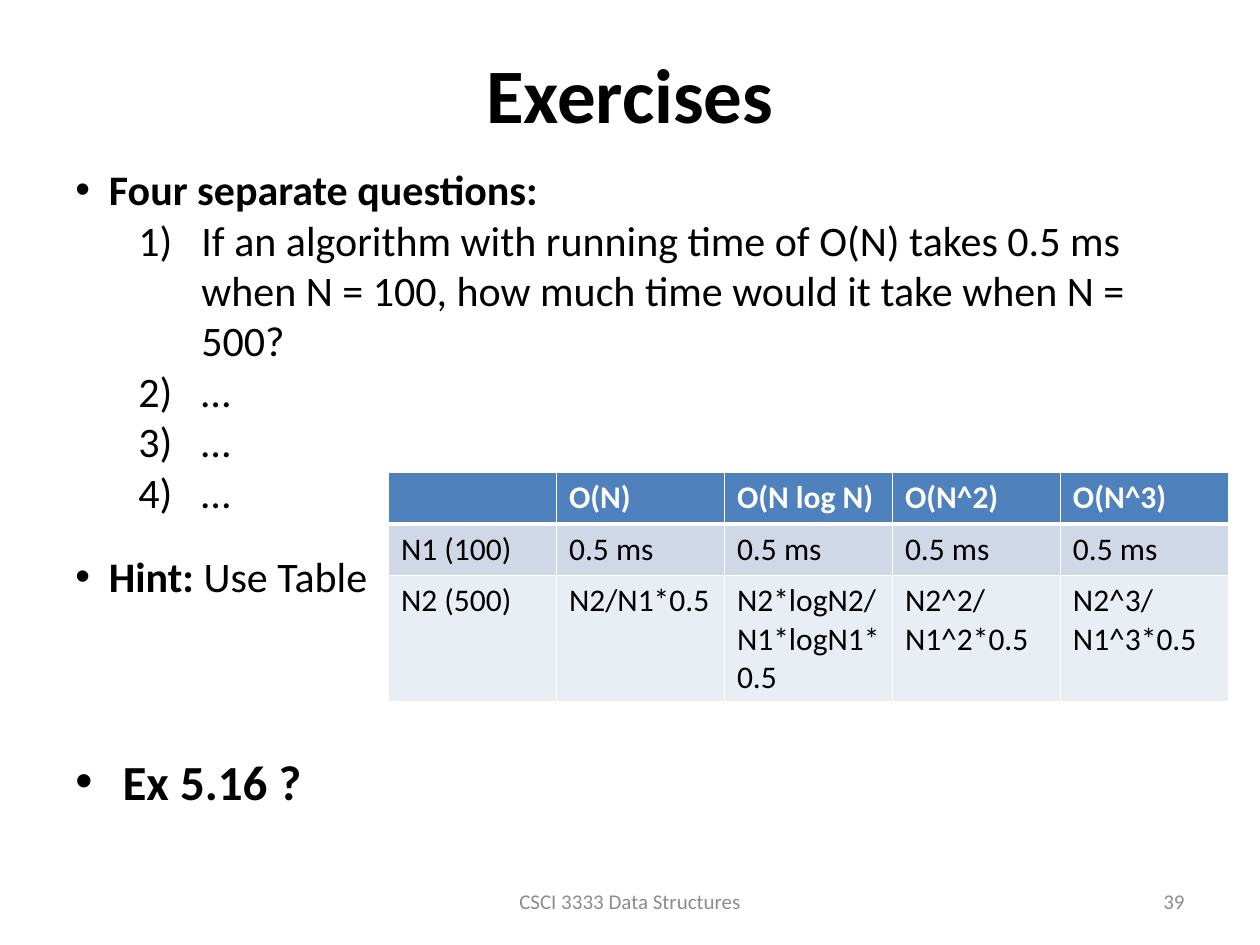
from lxml.etree import SubElement as Sub
from pptx import Presentation as Deck
from pptx.dml.color import RGBColor as Rgb
from pptx.enum.text import MSO_ANCHOR as Anchor, PP_ALIGN as Align
from pptx.oxml.ns import qn
from pptx.util import Inches, Pt

COLS, ROWS = 120, 90
WIDE, HIGH = Inches(10), Inches(7.5)
HUES = {"ink": "000000", "gray": "8C8C8C", "white": "FFFFFF",
        "head": "4F81BD", "odd": "D0D8E8", "even": "E9EDF4"}
ASKS = ["If an algorithm with running time of O(N) takes 0.5 ms "
        "when N = 100, how much time would it take when N = 500?",
        "…", "…", "…"]
GRID = [["", "O(N)", "O(N log N)", "O(N^2)", "O(N^3)"],
        ["N1 (100)"] + ["0.5 ms"] * 4,
        ["N2 (500)", "N2/N1*0.5", "N2*logN2/N1*logN1*0.5",
         "N2^2/N1^2*0.5", "N2^3/N1^3*0.5"]]


def across(n):
    return round(WIDE * n / COLS)


def down(n):
    return round(HIGH * n / ROWS)


def place(box):
    x, y, w, h = box
    return across(x), down(y), across(w), down(h)


def style(run, size, hue="ink", bold=False):
    font = run.font
    font.name, font.size, font.bold = "Calibri", Pt(size), bold
    font.color.rgb = Rgb.from_string(HUES[hue])


def mark(para, left, hang, tag, **kind):
    props = para._p.get_or_add_pPr()
    props.set("marL", str(across(left)))
    props.set("indent", str(-across(hang)))
    face = Sub(props, qn("a:buFont"))
    face.set("typeface", "Arial" if tag == "buChar" else "+mj-lt")
    item = Sub(props, qn("a:" + tag))
    for key, val in kind.items():
        item.set(key, val)


def frame(slide, box, anchor=Anchor.TOP):
    body = slide.shapes.add_textbox(*place(box)).text_frame
    body.word_wrap = True
    body.vertical_anchor = anchor
    return body


def label(slide, box, text, size, align, hue="ink", bold=False):
    body = frame(slide, box, Anchor.MIDDLE)
    body.text = text
    para = body.paragraphs[0]
    para.alignment = align
    style(para.runs[0], size, hue, bold)


def tasks(slide, box):
    body = frame(slide, box)
    body.text = "\n".join(["Four separate questions:"] + ASKS + ["Hint: "])
    first, *asks, hint = body.paragraphs
    hint.space_before = Pt(19.5)
    hint.add_run().text = "Use Table"
    for para in (first, hint):
        mark(para, 3.2, 3.2, "buChar", char="•")
        style(para.runs[0], 24, bold=True)
    style(hint.runs[1], 24)
    for para in asks:
        para.level = 1
        mark(para, 12, 6, "buAutoNum", type="arabicParenR")
        style(para.runs[0], 24)


def final(slide, box):
    body = frame(slide, box)
    body.text = "Ex 5.16 ?"
    para = body.paragraphs[0]
    mark(para, 4.5, 4.5, "buChar", char="•")
    style(para.runs[0], 28, bold=True)


def edge(cell, sides):
    props = cell._tc.get_or_add_tcPr()
    for side, width in sides.items():
        line = Sub(props, qn("a:ln" + side))
        line.set("w", str(Pt(width)))
        fill = Sub(line, qn("a:solidFill"))
        Sub(fill, qn("a:srgbClr")).set("val", HUES["white"])


def times(slide, box):
    table = slide.shapes.add_table(len(GRID), len(GRID[0]), *place(box)).table
    for col in table.columns:
        col.width = across(box[2] / len(GRID[0]))
    for row, size in zip(table.rows, (4.9, 4.9, 12)):
        row.height = down(size)
    for r, (texts, hue) in enumerate(zip(GRID, ("head", "odd", "even"))):
        top = r == 0
        for c, text in enumerate(texts):
            cell = table.cell(r, c)
            cell.text = text
            for run in cell.text_frame.paragraphs[0].runs:
                style(run, 18, "white" if top else "ink", top)
            edge(cell, {"L": 1, "R": 1, "T": 3 if r == 1 else 1,
                        "B": 3 if top else 1})
            cell.fill.solid()
            cell.fill.fore_color.rgb = Rgb.from_string(HUES[hue])


def main():
    deck = Deck()
    deck.slide_width, deck.slide_height = WIDE, HIGH
    slide = deck.slides.add_slide(deck.slide_layouts[6])
    final(slide, (6, 71, 108, 7))
    label(slide, (41, 83.4, 38, 4.8), "CSCI 3333 Data Structures",
          12, Align.CENTER, "gray")
    label(slide, (86, 83.4, 28, 4.8), "39", 12, Align.RIGHT, "gray")
    label(slide, (6, 3.6, 108, 10.4), "Exercises", 44, Align.CENTER, bold=True)
    times(slide, (37, 45, 80, 21.8))
    tasks(slide, (6, 15, 110, 43.2))
    deck.save("out.pptx")


if __name__ == "__main__":
    main()
